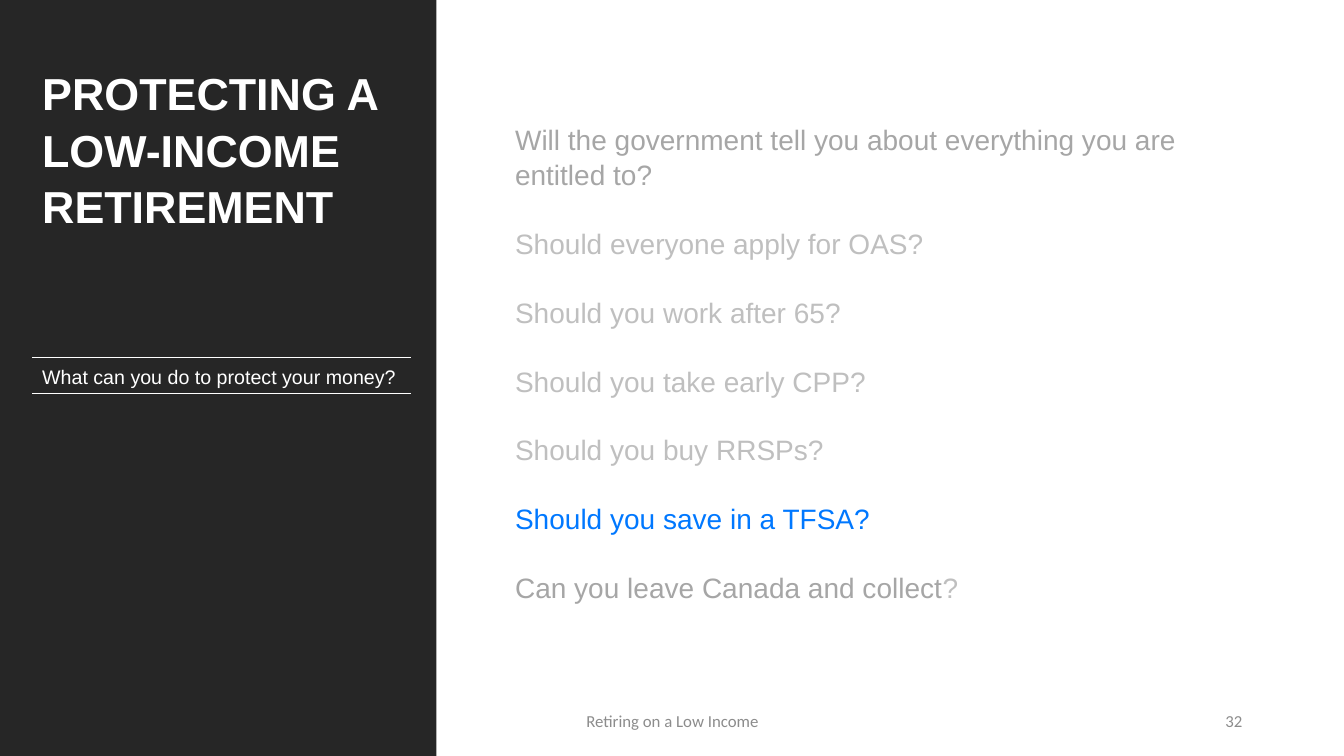
import pptx
import pptx.util
import pptx.dml.color
import pptx.enum.shapes
import pptx.enum.text
import pptx.oxml.ns
import lxml.etree

PX = 9144  # EMU per px, 100 px to the inch
COLORS = {"panel": "262626", "white": "FFFFFF", "gray": "A6A6A6",
          "light": "BFBFBF", "accent": "0078FF", "footer": "8C8C8C"}
ALIGN = pptx.enum.text.PP_ALIGN
ANCHOR = pptx.enum.text.MSO_ANCHOR


def rgb(name):
    return pptx.dml.color.RGBColor.from_string(COLORS[name])


def add_text(place, lines, size, font="Arial", bold=False, align=ALIGN.LEFT,
             anchor=ANCHOR.TOP, inset=(10, 5), spacing=1.05, gap=0):
    """Add a text box; each line is a list of (text, color) runs."""
    box = page.shapes.add_textbox(*[value * PX for value in place])
    frame = box.text_frame
    frame.word_wrap = True
    frame.vertical_anchor = anchor
    frame.margin_left = frame.margin_right = inset[0] * PX
    frame.margin_top = frame.margin_bottom = inset[1] * PX
    for index, line in enumerate(lines):
        para = frame.add_paragraph() if index else frame.paragraphs[0]
        para.alignment = align
        para.line_spacing = spacing
        if index:
            para.space_before = pptx.util.Pt(gap)
        para.font.name = font
        para.font.size = pptx.util.Pt(size)
        para.font.bold = bold
        for text, color in line:
            span = para.add_run()
            span.text = text
            span.font.color.rgb = rgb(color)


deck = pptx.Presentation()
deck.slide_width = 1333 * PX
deck.slide_height = 750 * PX
page = deck.slides.add_slide(deck.slide_layouts[6])

# Questions, with the current one highlighted
questions = [
    [("Will the government tell you about everything you are entitled to?", "gray")],
    [("Should everyone apply for OAS?", "light")],
    [("Should you work after 65?", "light")],
    [("Should you take early CPP?", "light")],
    [("Should you buy RRSPs?", "light")],
    [("Should you save in a TFSA?", "accent")],
    [("Can you leave Canada and collect", "gray"), ("?", "light")],
]
add_text((501, 77, 725, 565), questions, 20, anchor=ANCHOR.MIDDLE,
         inset=(10, 10), gap=24)

# Dark side panel
panel = page.shapes.add_shape(pptx.enum.shapes.MSO_SHAPE.RECTANGLE,
                              0, 0, 433 * PX, 750 * PX)
panel.shadow.inherit = False
panel.fill.solid()
panel.fill.fore_color.rgb = rgb("panel")
panel.line.fill.background()

# Footer and slide number
for left, width, text, align in [
    (442, 450, "Retiring on a Low Income", ALIGN.CENTER),
    (942, 300, "32", ALIGN.RIGHT),
]:
    add_text((left, 695, width, 40), [[(text, "footer")]], 12, font="Calibri",
             align=align, anchor=ANCHOR.MIDDLE, spacing=1.0)

# Title and subtitle on the panel
add_text((32, 58, 376, 172), [[("PROTECTING A LOW-INCOME RETIREMENT", "white")]],
         32, bold=True)
add_text((32, 356, 376, 34),
         [[("What can you do to protect your money?", "white")]], 14)

# Rules above and below the subtitle
for top in (355, 390):
    rule = page.shapes.add_connector(pptx.enum.shapes.MSO_CONNECTOR.STRAIGHT,
                                     32 * PX, top * PX, 408 * PX, top * PX)
    rule.line.color.rgb = rgb("white")
    rule.line.width = pptx.util.Pt(0.5)
    lxml.etree.SubElement(rule._element.spPr, pptx.oxml.ns.qn("a:effectLst"))

deck.save("out.pptx")
